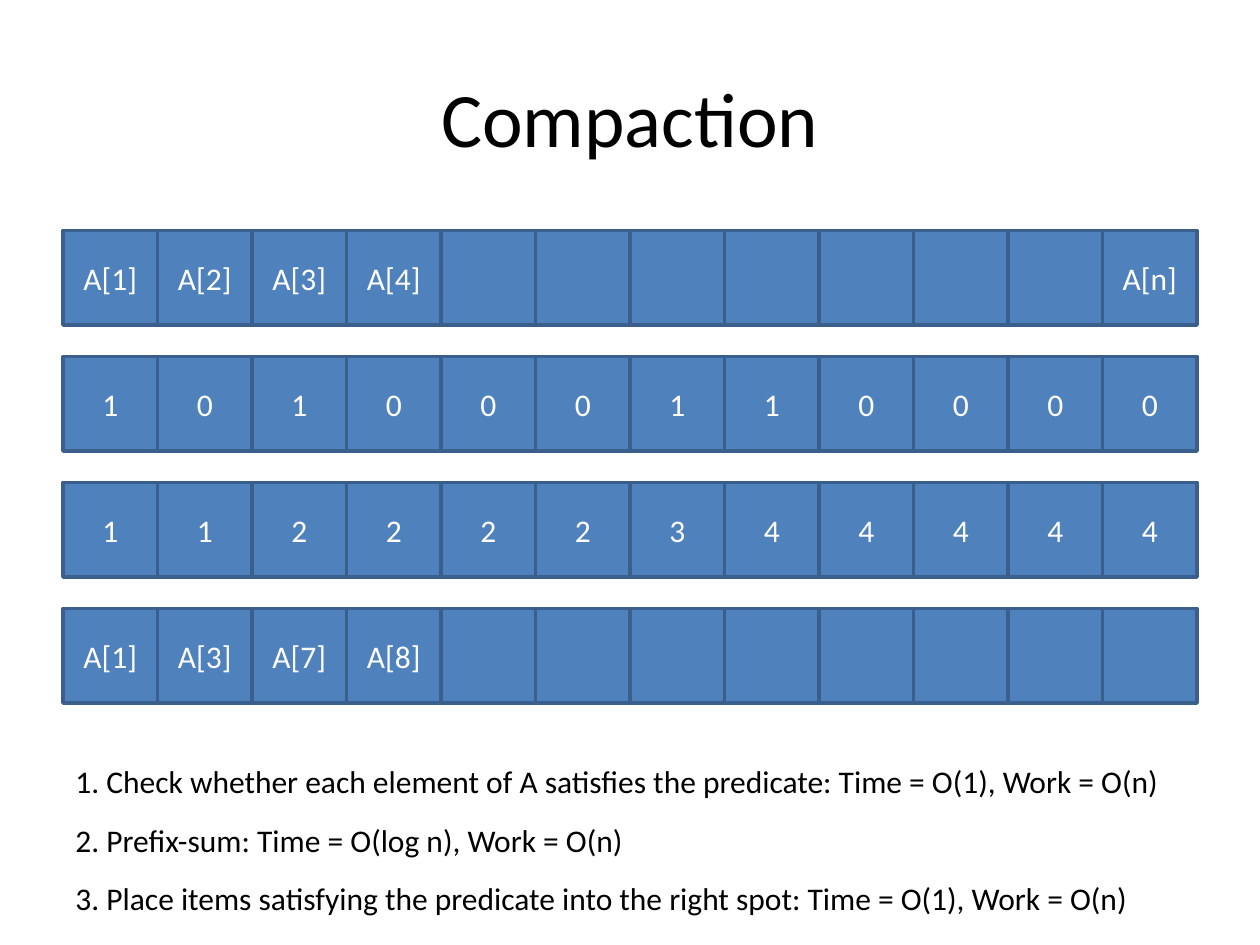
from pptx import Presentation
from pptx.dml.color import RGBColor
from pptx.enum import shapes, text
from pptx.util import Inches, Pt

TITLE = "Compaction"
ROWS = [
    ["A[1]", "A[2]", "A[3]", "A[4]"] + [""] * 7 + ["A[n]"],
    list("101000110000"),
    list("112222344444"),
    ["A[1]", "A[3]", "A[7]", "A[8]"] + [""] * 8,
]
STEPS = [
    ("1. Check whether each element of A satisfies the predicate: Time = O(1), Work = O(n)", 8.91),
    ("2. Prefix-sum: Time = O(log n), Work = O(n)", 4.61),
    ("3. Place items satisfying the predicate into the right spot: Time = O(1), Work = O(n)", 8.65),
]

FONT = "Calibri"
BLACK = RGBColor(0x00, 0x00, 0x00)
WHITE = RGBColor(0xFF, 0xFF, 0xFF)
BLUE = RGBColor(0x4F, 0x81, 0xBD)
DARK_BLUE = RGBColor(0x3A, 0x5F, 0x8C)

LEFT = 0.5
CELL = 0.75
ROWS_TOP, ROW_STEP = 1.83, 1
STEPS_TOP, STEP_GAP = 6, 0.465


def write(frame, words, size, color, align):
    para = frame.paragraphs[0]
    para.alignment = align
    span = para.add_run()
    span.text = words
    span.font.name = FONT
    span.font.size = Pt(size)
    span.font.color.rgb = color


def add_cell(parent, label, left, top):
    cell = parent.add_shape(shapes.MSO_SHAPE.RECTANGLE,
                            Inches(left), Inches(top), Inches(CELL), Inches(CELL))
    cell.shadow.inherit = False
    cell.fill.solid()
    cell.fill.fore_color.rgb = BLUE
    cell.line.color.rgb = DARK_BLUE
    cell.line.width = Pt(2)
    if label:
        cell.text_frame.vertical_anchor = text.MSO_ANCHOR.MIDDLE
        write(cell.text_frame, label, 18, WHITE, text.PP_ALIGN.CENTER)


def add_step(slide, words, width, top):
    box = slide.shapes.add_textbox(Inches(LEFT), Inches(top), Inches(width), Inches(0.4))
    box.text_frame.word_wrap = False
    box.text_frame.auto_size = text.MSO_AUTO_SIZE.SHAPE_TO_FIT_TEXT
    write(box.text_frame, words, 18, BLACK, text.PP_ALIGN.LEFT)


def main():
    deck = Presentation()
    deck.slide_width, deck.slide_height = Inches(10), Inches(7.5)
    slide = deck.slides.add_slide(deck.slide_layouts[5])

    title = slide.shapes.title
    title.left, title.top = Inches(LEFT), Inches(0.3)
    title.width, title.height = Inches(9), Inches(1.25)
    title.text_frame.vertical_anchor = text.MSO_ANCHOR.MIDDLE
    write(title.text_frame, TITLE, 44, BLACK, text.PP_ALIGN.CENTER)

    for row, labels in reversed(list(enumerate(ROWS))):
        parent = slide.shapes.add_group_shape().shapes if row else slide.shapes
        for column, label in enumerate(labels):
            add_cell(parent, label, LEFT + column * CELL, ROWS_TOP + row * ROW_STEP)

    for index, (words, width) in enumerate(STEPS):
        add_step(slide, words, width, STEPS_TOP + index * STEP_GAP)

    deck.save("out.pptx")


if __name__ == "__main__":
    main()
